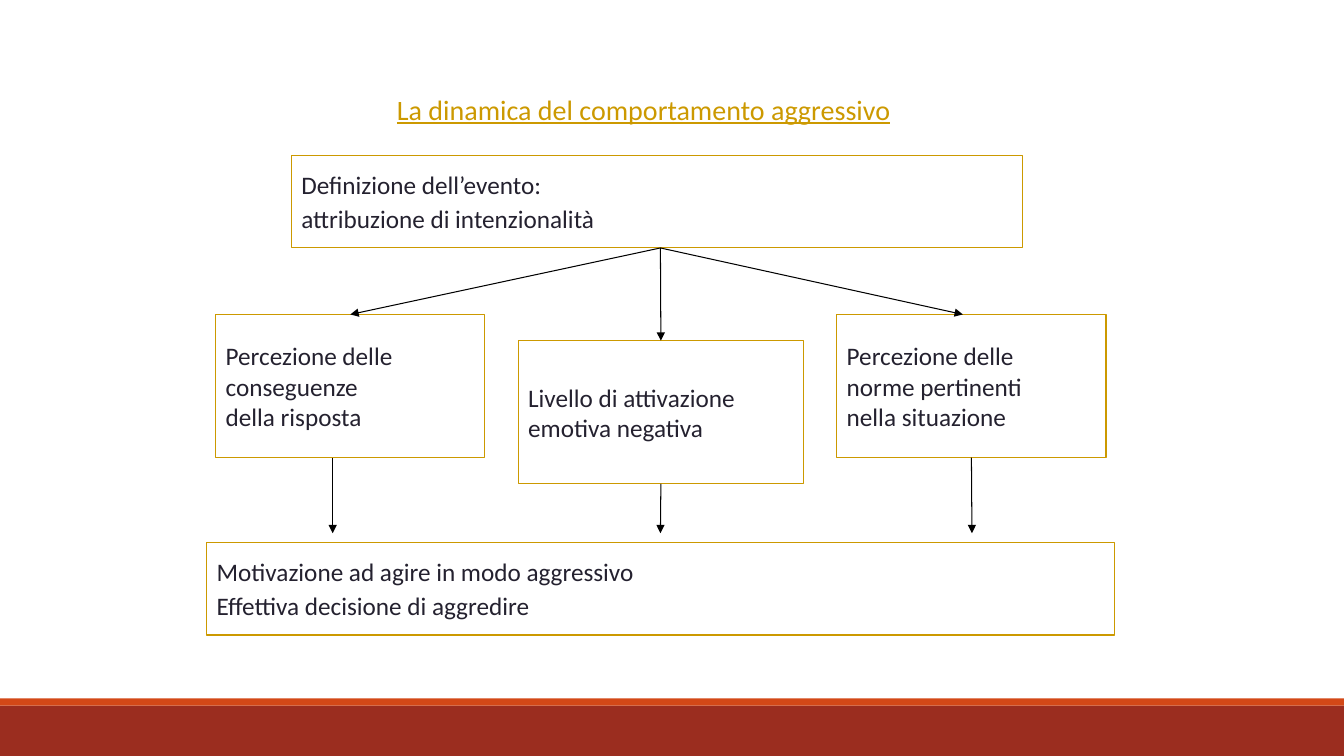
from pptx import Presentation
from pptx.dml.color import RGBColor
from pptx.enum.shapes import MSO_CONNECTOR, MSO_SHAPE
from pptx.enum.text import MSO_ANCHOR, PP_ALIGN
from pptx.oxml.ns import qn
from pptx.util import Inches, Pt
from lxml.etree import SubElement

# Content
TITLE = "La dinamica del comportamento aggressivo"
EVENT = ["Definizione dell’evento:", "attribuzione di intenzionalità"]
FACTORS = [
    ["Percezione delle", "conseguenze", "della risposta"],
    ["Livello di attivazione", "emotiva negativa"],
    ["Percezione delle", "norme pertinenti", "nella situazione"],
]
OUTCOME = ["Motivazione ad agire in modo aggressivo",
           "Effettiva decisione di aggredire"]

THEME = {
    "font": "Calibri", "title_size": 20, "body_size": 18, "line_width": 0.75,
    "gold": RGBColor(0xCC, 0x99, 0x00), "text": RGBColor(0x24, 0x21, 0x2F),
    "arrow": RGBColor(0, 0, 0),
    "band": RGBColor(0x9B, 0x2D, 0x1F), "stripe": RGBColor(0xD3, 0x48, 0x17),
}

# Layout in inches
SLIDE_W, SLIDE_H = 13.33, 7.5
BAND_TOP, STRIPE_H = 7, 0.07
WIDE_H, FACTOR_H = 0.92, 1.42
EVENT_AT = (2.89, 1.54, 7.25, WIDE_H)
OUTCOME_AT = (2.05, 5.38, 9, WIDE_H)
FACTORS_AT = [(2.14, 3.12, 2.67, FACTOR_H), (5.14, 3.38, 2.83, FACTOR_H),
              (8.3, 3.12, 2.67, FACTOR_H)]
FAN_X = 6.55
FAN_END_X = [3.47, 6.55, 9.55]
DOWN_X = [3.3, 6.55, 9.64]
DOWN_END_Y = 5.29
TOP, BOTTOM = 0, 2
JOIN_TOLERANCE = 0.01


def style_run(r, size, color):
    r.font.name = THEME["font"]
    r.font.size = Pt(size)
    r.font.color.rgb = color


def add_rect(slide, at):
    sp = slide.shapes.add_shape(MSO_SHAPE.RECTANGLE, *map(Inches, at))
    sp.shadow.inherit = False
    return sp


def add_bar(slide, at, color):
    sp = add_rect(slide, at)
    sp.fill.solid()
    sp.fill.fore_color.rgb = color
    sp.line.fill.background()


def add_box(slide, at, lines, gap=0):
    sp = add_rect(slide, at)
    sp.fill.background()
    sp.line.color.rgb = THEME["gold"]
    sp.line.width = Pt(THEME["line_width"])
    tf = sp.text_frame
    tf.word_wrap = True
    tf.vertical_anchor = MSO_ANCHOR.MIDDLE
    tf.text = "\n".join(lines)
    for i, p in enumerate(tf.paragraphs):
        p.alignment = PP_ALIGN.LEFT
        p.space_before = Pt(gap if i else 0)
        style_run(p.runs[0], THEME["body_size"], THEME["text"])
    return sp


def at_middle(x, at):
    return abs(x - (at[0] + at[2] / 2)) < JOIN_TOLERANCE


def add_arrow(slide, start, end):
    cx = slide.shapes.add_connector(MSO_CONNECTOR.STRAIGHT,
                                    *map(Inches, start + end))
    cx.line.color.rgb = THEME["arrow"]
    cx.line.width = Pt(THEME["line_width"])
    SubElement(cx.line._get_or_add_ln(), qn("a:tailEnd"), type="triangle")
    SubElement(cx._element.spPr, qn("a:effectLst"))
    return cx


def main():
    prs = Presentation()
    prs.slide_width, prs.slide_height = Inches(SLIDE_W), Inches(SLIDE_H)
    slide = prs.slides.add_slide(prs.slide_layouts[5])

    # Footer bars
    add_bar(slide, (0, BAND_TOP, SLIDE_W, SLIDE_H - BAND_TOP), THEME["band"])
    add_bar(slide, (0, BAND_TOP - STRIPE_H, SLIDE_W, STRIPE_H), THEME["stripe"])

    # Title
    title = slide.shapes.title
    title.left, title.top = Inches(1.55), Inches(0.88)
    title.width, title.height = Inches(9.67), Inches(0.4)
    tf = title.text_frame
    tf.text = TITLE
    tf.vertical_anchor = MSO_ANCHOR.MIDDLE
    p = tf.paragraphs[0]
    p.alignment = PP_ALIGN.CENTER
    style_run(p.runs[0], THEME["title_size"], THEME["gold"])
    p.runs[0].font.underline = True

    # Event and outcome boxes
    add_box(slide, EVENT_AT, EVENT, gap=2.5)
    add_box(slide, OUTCOME_AT, OUTCOME, gap=2.5)

    # Factors, each with an arrow in and an arrow out
    fan_y = EVENT_AT[1] + WIDE_H
    for lines, at, fan_x, down_x in zip(FACTORS, FACTORS_AT, FAN_END_X, DOWN_X):
        box = add_box(slide, at, lines)
        fan = add_arrow(slide, (FAN_X, fan_y), (fan_x, at[1]))
        if at_middle(fan_x, at):
            fan.end_connect(box, TOP)
        down = add_arrow(slide, (down_x, at[1] + FACTOR_H), (down_x, DOWN_END_Y))
        if at_middle(down_x, at):
            down.begin_connect(box, BOTTOM)

    prs.save("out.pptx")


if __name__ == "__main__":
    main()
